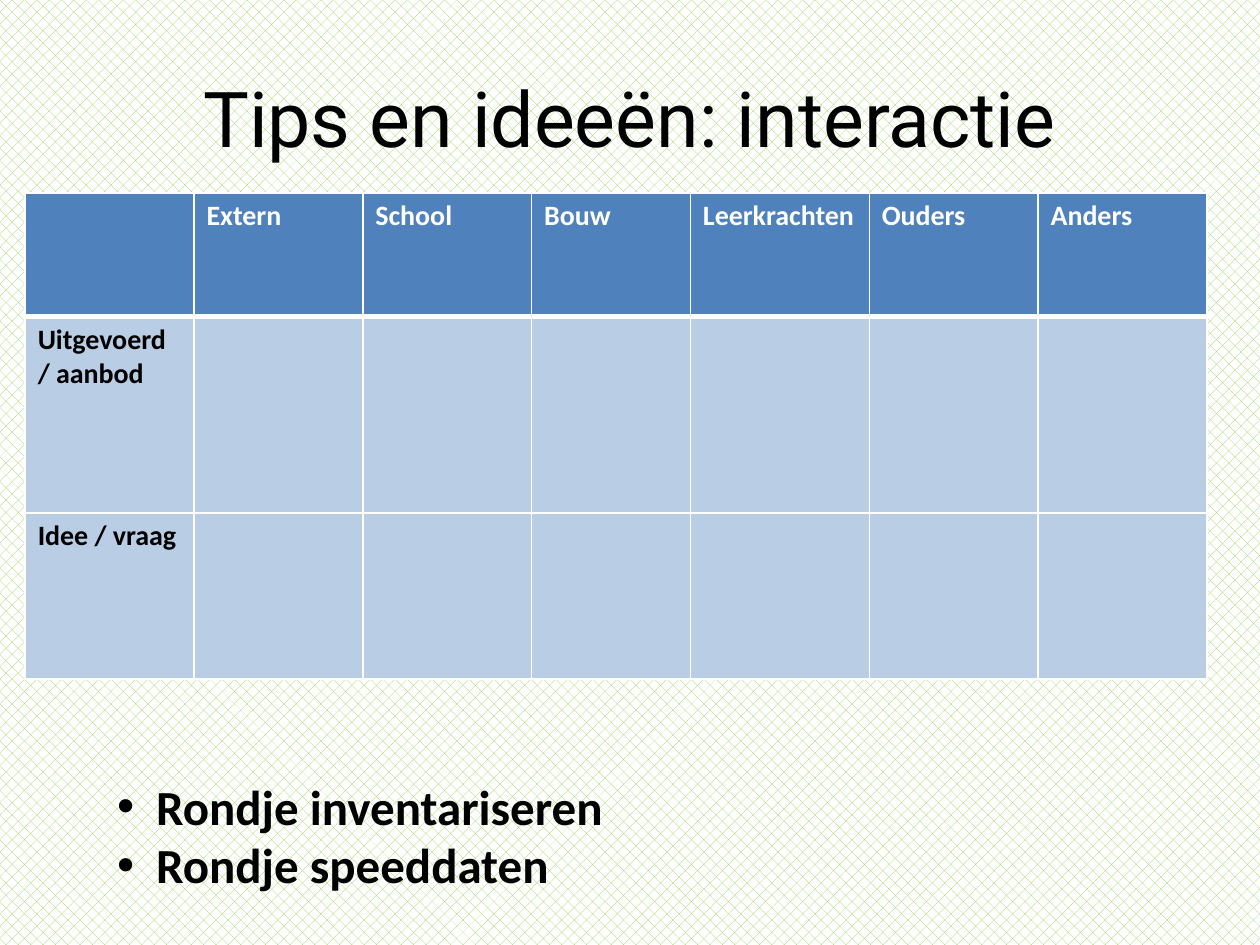
"""Build the slide with the interaction table and its two follow-up rounds."""
from dataclasses import dataclass

from lxml.etree import SubElement
from pptx import Presentation
from pptx.dml.color import RGBColor
from pptx.enum.dml import MSO_PATTERN
from pptx.enum.text import MSO_ANCHOR, MSO_AUTO_SIZE, PP_ALIGN
from pptx.oxml.ns import qn
from pptx.util import Inches, Pt

BLACK = RGBColor(0x00, 0x00, 0x00)
WHITE = RGBColor(0xFF, 0xFF, 0xFF)
GREEN = RGBColor(0x92, 0xD0, 0x50)
HEADER_BLUE = RGBColor(0x4F, 0x81, 0xBD)
BODY_BLUE = RGBColor(0xB9, 0xCD, 0xE5)

COLUMN_WIDTHS = (1.34, 1.34, 1.34, 1.26, 1.42, 1.34, 1.34)
ROUNDS = ("Rondje inventariseren", "Rondje speeddaten")


@dataclass(frozen=True)
class TableRow:
    labels: tuple[str, ...]
    height: float
    fill: RGBColor
    ink: RGBColor
    top: float = 1
    bottom: float = 1


ROWS = (
    TableRow(("", "Extern", "School", "Bouw", "Leerkrachten", "Ouders", "Anders"),
             0.98, HEADER_BLUE, WHITE, bottom=3),
    TableRow(("Uitgevoerd / aanbod",), 1.56, BODY_BLUE, BLACK, top=3),
    TableRow(("Idee / vraag",), 1.32, BODY_BLUE, BLACK),
)


def place(shape, left: float, top: float, width: float, height: float) -> None:
    shape.left, shape.top = Inches(left), Inches(top)
    shape.width, shape.height = Inches(width), Inches(height)


def format_runs(paragraph, font: str, size: float, color: RGBColor, bold: bool) -> None:
    for run in paragraph.runs:
        run.font.name = font
        run.font.size = Pt(size)
        run.font.bold = bold
        run.font.color.rgb = color


def add_borders(cell, top: float, bottom: float) -> None:
    properties = cell._tc.get_or_add_tcPr()
    for side, width in (("L", 1), ("R", 1), ("T", top), ("B", bottom)):
        border = SubElement(properties, qn(f"a:ln{side}"), w=str(Pt(width)))
        solid = SubElement(border, qn("a:solidFill"))
        SubElement(solid, qn("a:srgbClr"), val=str(WHITE))


def draw_title(title) -> None:
    place(title, 0.5, 0.3, 9, 1.25)
    title.text_frame.text = "Tips en ideeën: interactie"
    title.text_frame.vertical_anchor = MSO_ANCHOR.MIDDLE
    heading = title.text_frame.paragraphs[0]
    heading.alignment = PP_ALIGN.CENTER
    format_runs(heading, "Roboto", 44, BLACK, False)


def draw_table(slide) -> None:
    table = slide.shapes.add_table(
        len(ROWS), len(COLUMN_WIDTHS), Inches(0.2), Inches(1.53),
        Inches(sum(COLUMN_WIDTHS)), Inches(sum(row.height for row in ROWS))).table
    for column, width in zip(table.columns, COLUMN_WIDTHS):
        column.width = Inches(width)
    for table_row, row in zip(table.rows, ROWS):
        table_row.height = Inches(row.height)
        for cell in table_row.cells:
            add_borders(cell, row.top, row.bottom)
            cell.fill.solid()
            cell.fill.fore_color.rgb = row.fill
        for cell, label in zip(table_row.cells, row.labels):
            cell.text_frame.text = label
            format_runs(cell.text_frame.paragraphs[0], "Calibri", 16, row.ink, True)


def draw_rounds(body) -> None:
    place(body, 0.83, 6.11, 4.1, 1.04)
    frame = body.text_frame
    frame.text = "\n".join(ROUNDS)
    frame.word_wrap = False
    frame.auto_size = MSO_AUTO_SIZE.SHAPE_TO_FIT_TEXT
    frame.vertical_anchor = MSO_ANCHOR.TOP
    for paragraph in frame.paragraphs:
        paragraph.space_before = Pt(0)
        properties = paragraph._p.get_or_add_pPr()
        properties.set("marL", str(Inches(0.31)))
        properties.set("indent", str(Inches(-0.31)))
        SubElement(properties, qn("a:buFont"), typeface="Arial")
        SubElement(properties, qn("a:buChar"), char="•")
        format_runs(paragraph, "Calibri", 28, BLACK, True)


def main() -> None:
    presentation = Presentation()
    presentation.slide_width, presentation.slide_height = Inches(10), Inches(7.5)
    slide = presentation.slides.add_slide(presentation.slide_layouts[1])
    backdrop = slide.background.fill
    backdrop.patterned()
    backdrop.pattern = MSO_PATTERN.PERCENT_30
    backdrop.fore_color.rgb = GREEN
    backdrop.back_color.rgb = WHITE
    draw_title(slide.shapes.title)
    draw_table(slide)
    draw_rounds(slide.placeholders[1])
    presentation.save("out.pptx")


if __name__ == "__main__":
    main()
